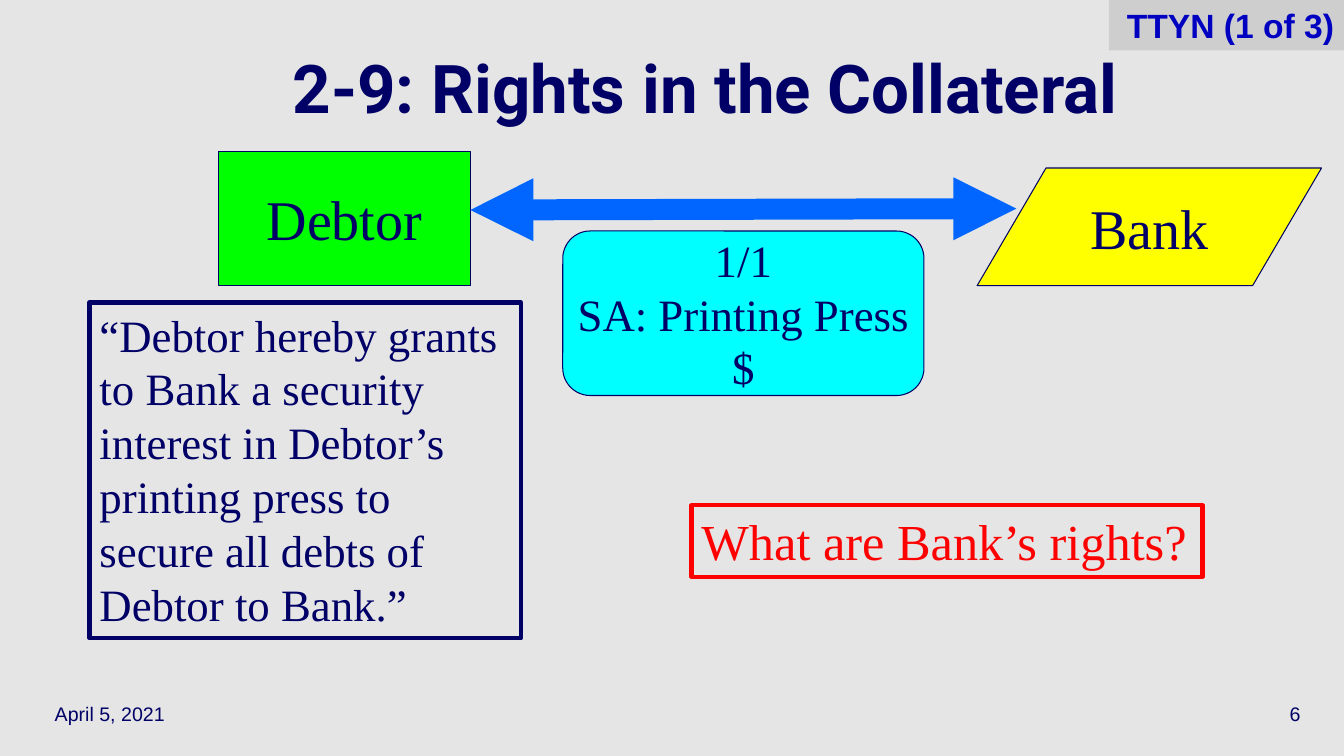
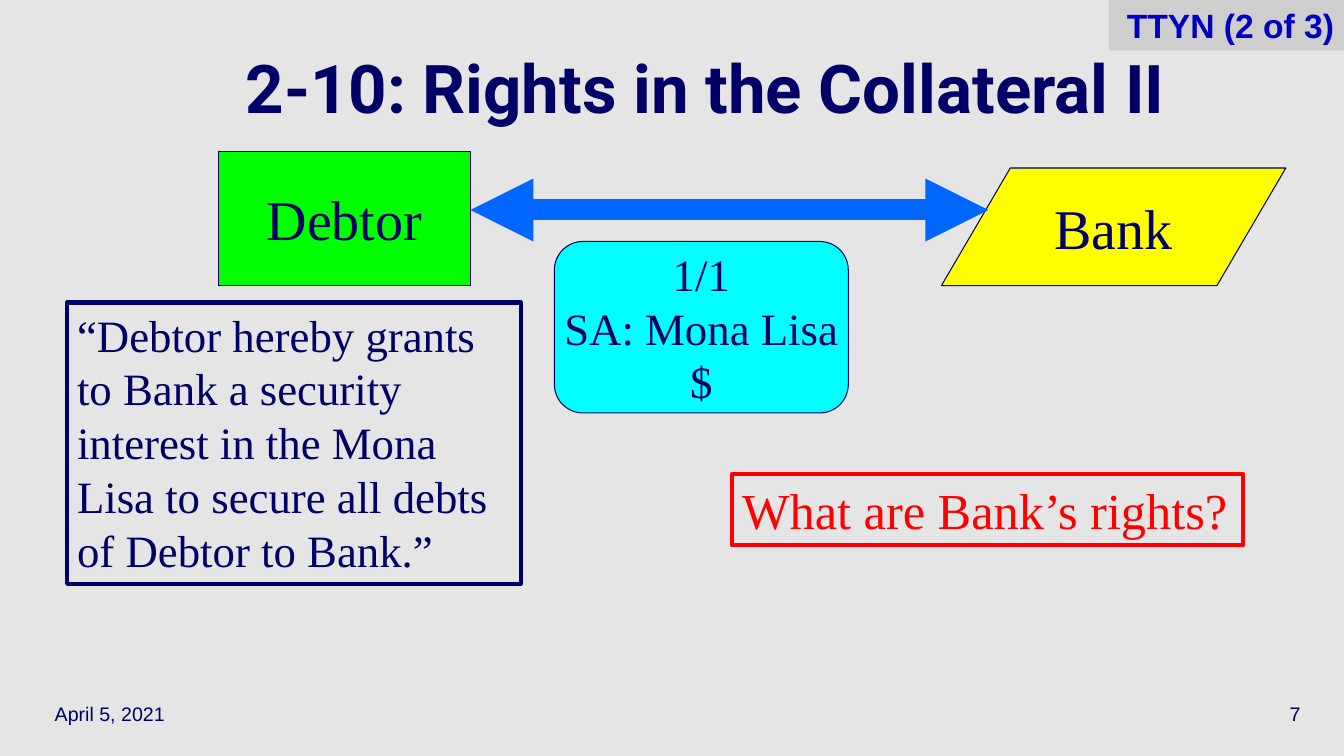
import pptx
import pptx.dml.color
import pptx.enum.shapes
import pptx.enum.text
import pptx.oxml
import pptx.oxml.ns
import pptx.util

Pt = pptx.util.Pt
SHAPE = pptx.enum.shapes.MSO_SHAPE
ALIGN = pptx.enum.text.PP_ALIGN
ANCHOR = pptx.enum.text.MSO_ANCHOR
NO_FIT = pptx.enum.text.MSO_AUTO_SIZE.NONE

NAVY, BLUE, RED, ARROW = "000066", "0000C0", "FF0000", "0066FF"
GREEN, YELLOW, CYAN = "00FF00", "FFFF00", "00FFFF"
PAGE, TAG = "E5E5E5", "CECECE"
SERIF, SANS, HEADING = "Times New Roman", "Arial", "Roboto"


def rgb(value):
    return pptx.dml.color.RGBColor.from_string(value)


def apply(target, values):
    for name, value in values.items():
        setattr(target, name, value)


def add_xml(parent, tag, **attributes):
    element = pptx.oxml.parse_xml(f"<a:{tag} {pptx.oxml.ns.nsdecls('a')}/>")
    for name, value in attributes.items():
        element.set(name, value)
    parent.append(element)


class Deck:
    def __init__(self):
        self.prs = pptx.Presentation()
        apply(self.prs, {"slide_width": Pt(960), "slide_height": Pt(540)})
        fill = self.prs.slide_master.background.fill
        fill.solid()
        fill.fore_color.rgb = rgb(PAGE)

    def slide(self, title, tag, number):
        self.s = self.prs.slides.add_slide(self.prs.slide_layouts[5])
        sp = self.s.shapes.title
        apply(sp, {"left": Pt(64), "top": Pt(24), "width": Pt(880), "height": Pt(90)})
        self.text(sp, title, 48, font=HEADING, bold=True, spacing=0.7, wrap=True)
        self.footer(32, "April 5, 2021", ALIGN.LEFT)
        self.footer(736, str(number), ALIGN.RIGHT)
        self.box(SHAPE.RECTANGLE, (792, 0, 168, 36), tag, 24, fill=TAG, color=BLUE,
                 font=SANS, bold=True, align=ALIGN.RIGHT, anchor=ANCHOR.TOP, wrap=True)

    def text(self, sp, text, size, color=NAVY, font=SERIF, bold=False, spacing=None,
             align=ALIGN.CENTER, anchor=ANCHOR.MIDDLE, wrap=False):
        tf = sp.text_frame
        tf.text = text
        apply(tf, {"auto_size": NO_FIT, "word_wrap": wrap, "vertical_anchor": anchor})
        for p in tf.paragraphs:
            apply(p, {"alignment": align, "line_spacing": spacing})
            for r in p.runs:
                apply(r.font, {"name": font, "size": Pt(size), "bold": bold})
                r.font.color.rgb = rgb(color)

    def footer(self, left, text, align):
        sp = self.s.shapes.add_textbox(Pt(left), Pt(492), Pt(200), Pt(36))
        self.text(sp, text, 14, font=SANS, align=align, wrap=True)

    def box(self, kind, place, text, size, fill=None, line=None, width=0.75, **style):
        sp = self.s.shapes.add_shape(kind, *map(Pt, place))
        sp.shadow.inherit = False
        if fill:
            sp.fill.solid()
            sp.fill.fore_color.rgb = rgb(fill)
        else:
            sp.fill.background()
        if line:
            sp.line.color.rgb = rgb(line)
            sp.line.width = Pt(width)
        else:
            sp.line.fill.background()
        self.text(sp, text, size, **style)

    def node(self, kind, place, text, size, fill):
        self.box(kind, place, text, size, fill=fill, line=NAVY)

    def frame(self, place, text, size, color, wrap):
        self.box(SHAPE.RECTANGLE, place, text, size, line=color, width=3, color=color,
                 align=ALIGN.LEFT, anchor=ANCHOR.TOP, wrap=wrap)

    def arrow(self, *ends):
        straight = pptx.enum.shapes.MSO_CONNECTOR.STRAIGHT
        line = self.s.shapes.add_connector(straight, *map(Pt, ends))
        line.line.color.rgb = rgb(ARROW)
        line.line.width = Pt(15)
        ln = line.line._get_or_add_ln()
        for end in ("headEnd", "tailEnd"):
            add_xml(ln, end, type="triangle")
        add_xml(line._element.spPr, "effectLst")

    def loan(self, bank_left, arrow_end, collateral, agreement, quote, quote_place, question):
        self.node(SHAPE.FLOWCHART_DATA, (bank_left, 120, 246, 84), "Bank", 40, YELLOW)
        self.node(SHAPE.FLOWCHART_PROCESS, (156, 108, 180, 96), "Debtor", 40, GREEN)
        self.arrow(336, 150, *arrow_end)
        self.node(SHAPE.FLOWCHART_ALTERNATE_PROCESS, agreement,
                  f"1/1\nSA: {collateral}\n$", 32, CYAN)
        self.frame(quote_place, f"“Debtor hereby grants to Bank a security interest in {quote} "
                   "to secure all debts of Debtor to Bank.”", 32, NAVY, True)
        self.frame((*question, 365, 51), "What are Bank’s rights?", 36, RED, False)


def main():
    deck = Deck()
    deck.slide("2‑9: Rights in the Collateral", "TTYN (1 of 3)", 6)
    deck.loan(698, (726, 149), "Printing Press", (402, 165, 258, 117.5),
              "Debtor’s printing press", (64, 216, 308, 240), (494, 361))
    deck.slide("2‑10: Rights in the Collateral II", "TTYN (2 of 3)", 7)
    deck.loan(672.5, (706, 150), "Mona Lisa", (396, 172.5, 210, 122.5),
              "the Mona Lisa", (48, 216, 324, 201), (523, 338.5))
    deck.prs.save("out.pptx")


if __name__ == "__main__":
    main()
